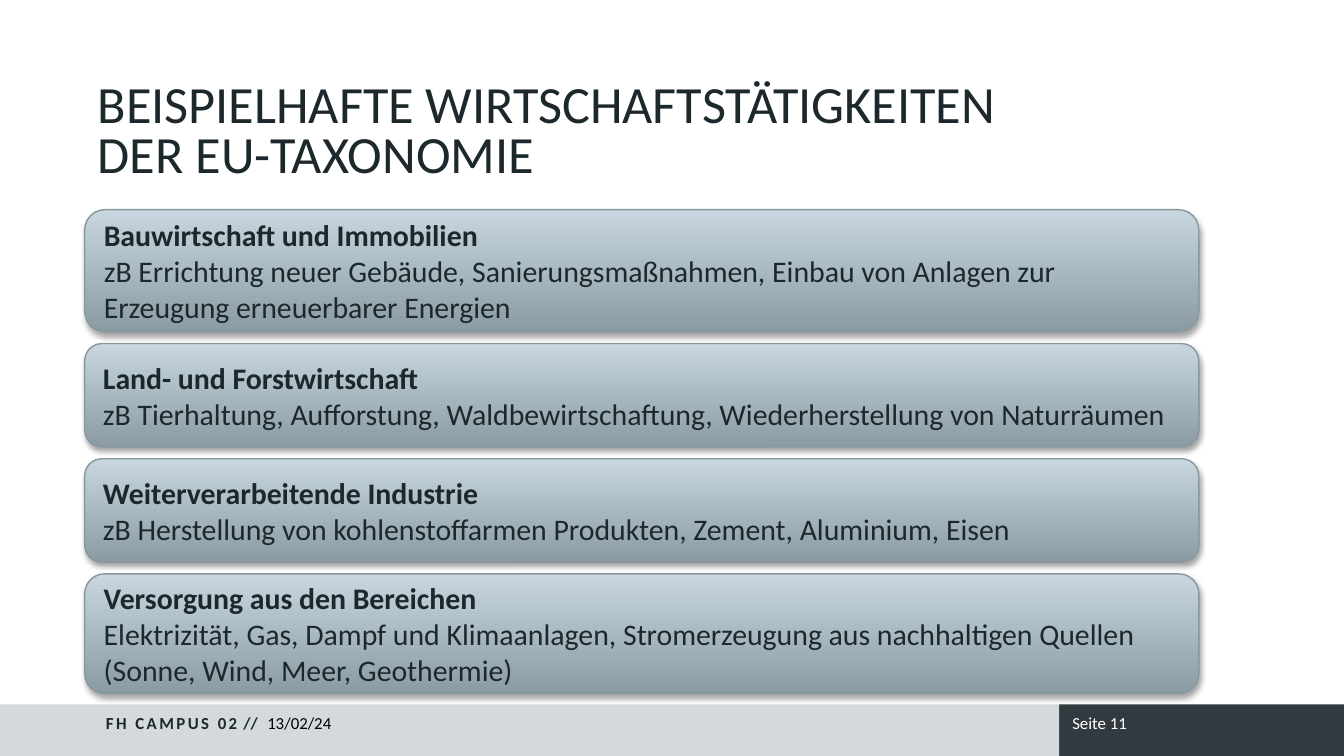
import pptx
import pptx.dml.color
import pptx.enum.shapes
import pptx.enum.text
import pptx.oxml
import pptx.util

Inches = pptx.util.Inches
Pt = pptx.util.Pt
SHAPES = pptx.enum.shapes.MSO_SHAPE
ANCHOR = pptx.enum.text.MSO_ANCHOR

FONT = "Calibri"
COLOURS = {
    "text": "1D282C",
    "date": "000000",
    "page": "FFFFFF",
    "bar": "D4DADC",
    "bar_end": "323A40",
    "card_bottom": "8A9BA4",
    "card_top": "C8D7DF",
    "card_line": "89979E",
    "shadow": "000000",
}

TITLE = "BEISPIELHAFTE WIRTSCHAFTSTÄTIGKEITEN DER EU-TAXONOMIE"
CARDS = [
    (0.91, "Bauwirtschaft und Immobilien",
     "zB Errichtung neuer Gebäude, Sanierungsmaßnahmen, Einbau von Anlagen zur "
     "Erzeugung erneuerbarer Energien"),
    (0.77, "Land- und Forstwirtschaft",
     "zB Tierhaltung, Aufforstung, Waldbewirtschaftung, Wiederherstellung von "
     "Naturräumen"),
    (0.77, "Weiterverarbeitende Industrie",
     "zB Herstellung von kohlenstoffarmen Produkten, Zement, Aluminium, Eisen"),
    (0.89, "Versorgung aus den Bereichen",
     "Elektrizität, Gas, Dampf und Klimaanlagen, Stromerzeugung aus nachhaltigen "
     "Quellen (Sonne, Wind, Meer, Geothermie)"),
]


def rgb(name):
    return pptx.dml.color.RGBColor.from_string(COLOURS[name])


def style(span, size, colour, bold=False):
    span.font.name = FONT
    span.font.size = Pt(size)
    span.font.bold = bold
    span.font.color.rgb = rgb(colour)


def add_text(page, left, top, width, height, spans, size, colour, bold=False):
    """Add a text box with one paragraph made of the given spans."""
    box = page.shapes.add_textbox(
        Inches(left), Inches(top), Inches(width), Inches(height))
    para = box.text_frame.paragraphs[0]
    for words in spans:
        span = para.add_run()
        span.text = words
        style(span, size, colour, bold)
    return box


def add_title(page, left, top, width, height):
    box = add_text(page, left, top, width, height, [TITLE], 28, "text")
    box.text_frame.word_wrap = True
    box.text_frame.paragraphs[0].line_spacing = 0.8


def add_soft_shadow(shape):
    shape._element.spPr.append(pptx.oxml.parse_xml(
        '<a:effectLst xmlns:a="http://schemas.openxmlformats.org/drawingml/2006/main">'
        f'<a:outerShdw blurRad="{Pt(3.1)}" dist="{Pt(1.8)}" dir="5400000" '
        'rotWithShape="0">'
        f'<a:srgbClr val="{COLOURS["shadow"]}"><a:alpha val="35000"/></a:srgbClr>'
        '</a:outerShdw></a:effectLst>'))


def add_card(page, left, top, width, height, heading, examples):
    card = page.shapes.add_shape(
        SHAPES.ROUNDED_RECTANGLE,
        Inches(left), Inches(top), Inches(width), Inches(height))
    card.fill.gradient()
    card.fill.gradient_angle = 90
    for stop, name in zip(card.fill.gradient_stops, ("card_bottom", "card_top")):
        stop.color.rgb = rgb(name)
    card.line.color.rgb = rgb("card_line")
    card.line.width = Pt(0.75)
    add_soft_shadow(card)

    frame = card.text_frame
    frame.word_wrap = True
    frame.vertical_anchor = ANCHOR.MIDDLE
    frame.text = f"{heading}\n{examples}"
    for index, para in enumerate(frame.paragraphs):
        para.alignment = pptx.enum.text.PP_ALIGN.LEFT
        style(para.runs[0], 16, "text", bold=index == 0)


def add_card_stack(page, left, top, width, height):
    """Spread the cards over the height with equal gaps."""
    gap = (height - sum(card[0] for card in CARDS)) / (len(CARDS) - 1)
    for card_height, heading, examples in CARDS:
        add_card(page, left, top, width, card_height, heading, examples)
        top += card_height + gap


def add_footer(page, left, top, width, height):
    split = 7.88
    for start, end, colour in ((split, width, "bar_end"), (0, split, "bar")):
        bar = page.shapes.add_shape(
            SHAPES.RECTANGLE, Inches(left + start), Inches(top),
            Inches(end - start), Inches(height))
        bar.shadow.inherit = False
        bar.fill.solid()
        bar.fill.fore_color.rgb = rgb(colour)
        bar.line.fill.background()

    labels = [
        (0.69, 1.36, ["FH CAMPUS 02", " //"], "text", True),
        (1.89, 0.88, ["13/02/24"], "date", False),
        (split, 1.32, ["Seite 11"], "page", False),
    ]
    for start, label_width, spans, colour, bold in labels:
        box = add_text(page, left + start, top, label_width, 0.27,
                       spans, 9, colour, bold)
        box.text_frame.vertical_anchor = ANCHOR.MIDDLE
        box.text_frame.word_wrap = len(spans) == 1
        if len(spans) > 1:
            school = box.text_frame.paragraphs[0].runs[0]
            school.font._element.set("spc", "130")


def main():
    deck = pptx.Presentation()
    deck.slide_width = Inches(10)
    deck.slide_height = deck.slide_width * 9 // 16
    page = deck.slides.add_slide(deck.slide_layouts[6])
    add_footer(page, 0, 5.24, 10.02, 0.39)
    add_title(page, 0.63, 0.57, 7.03, 1.24)
    add_card_stack(page, 0.63, 1.56, 8.29, 3.6)
    deck.save("out.pptx")


if __name__ == "__main__":
    main()
